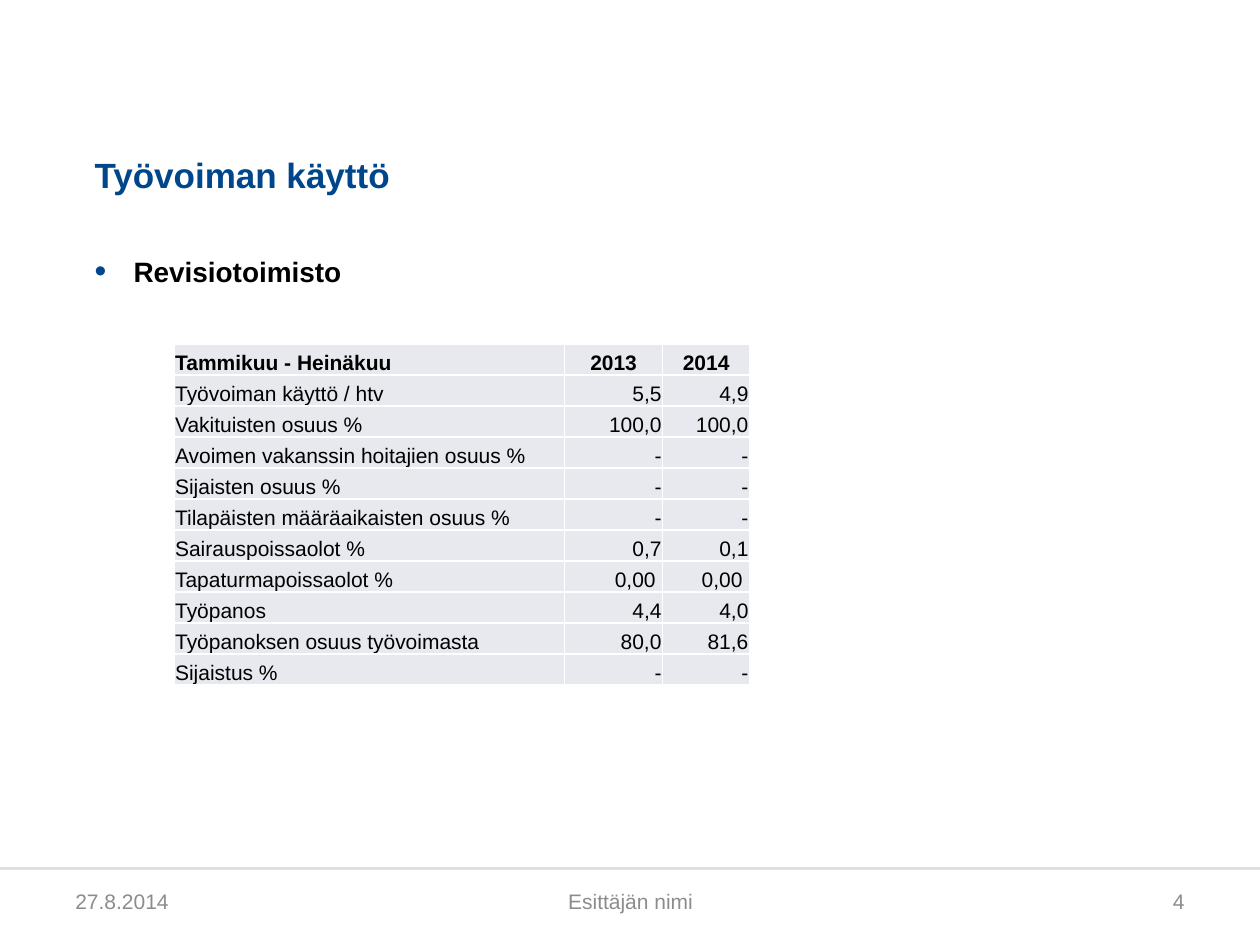
from lxml.etree import SubElement
from pptx import Presentation
from pptx.dml.color import RGBColor
from pptx.enum.shapes import MSO_CONNECTOR, MSO_SHAPE
from pptx.enum.text import MSO_ANCHOR, MSO_AUTO_SIZE, PP_ALIGN
from pptx.oxml.ns import qn
from pptx.util import Inches, Pt

COLORS = {"title": "00468B", "text": "000000", "footer": "8C8C8C",
          "rule": "DFDFDF", "cell": "E7E9EE", "white": "FFFFFF"}


def color(name):
    return RGBColor.from_string(COLORS[name])


def write(frame, text, size=12, ink="text", bold=False, align=PP_ALIGN.LEFT, bullet=None):
    """Put one formatted paragraph into a text frame, with an optional bullet."""
    paragraph = frame.paragraphs[0]
    paragraph.text = text
    paragraph.alignment = align
    paragraph.space_before = Pt(0)
    if bullet:
        properties = paragraph._p.get_or_add_pPr()
        properties.set("marL", str(Inches(0.31)))
        properties.set("indent", str(-Inches(0.31)))
        bullet_color = SubElement(properties, qn("a:buClr"))
        SubElement(bullet_color, qn("a:srgbClr"), val=COLORS["title"])
        SubElement(properties, qn("a:buSzPct"), val="120000")
        SubElement(properties, qn("a:buFont"), typeface="Arial")
        SubElement(properties, qn("a:buChar"), char=bullet)
    font = paragraph.runs[0].font
    font.name, font.size, font.bold = "Arial", Pt(size), bold
    font.color.rgb = color(ink)


deck = Presentation()
deck.slide_width, deck.slide_height = Inches(10), Inches(7.5)
slide = deck.slides.add_slide(deck.slide_layouts[1])
width, height = deck.slide_width, deck.slide_height

# Title and bullet list share the same margins
title, body = slide.shapes.title, slide.placeholders[1]
for holder, top, tall, anchor in ((title, 0.68, 0.87, MSO_ANCHOR.BOTTOM),
                                  (body, 2.02, 4.88, MSO_ANCHOR.TOP)):
    holder.left, holder.top = Inches(0.75), Inches(top)
    holder.width, holder.height = Inches(8.5), Inches(tall)
    frame = holder.text_frame
    frame.margin_left = frame.margin_right = frame.margin_top = frame.margin_bottom = 0
    frame.vertical_anchor = anchor
    frame.word_wrap = True
    frame.auto_size = MSO_AUTO_SIZE.NONE
write(title.text_frame, "Työvoiman käyttö", size=20, ink="title", bold=True)
write(body.text_frame, "Revisiotoimisto", size=16, bold=True, bullet="•")

# Footer band, its rule and three texts
band = slide.shapes.add_shape(MSO_SHAPE.RECTANGLE, 0, int(height * 0.92), width, int(height * 0.08))
band.shadow.inherit = False
band.fill.solid()
band.fill.fore_color.rgb = color("white")
band.line.fill.background()
rule_top = Inches(6.89)
rule = slide.shapes.add_connector(MSO_CONNECTOR.STRAIGHT, 0, rule_top, width, rule_top)
rule.line.color.rgb = color("rule")
rule.line.width = Pt(1.75)
SubElement(rule._element.spPr, qn("a:effectLst"))
for text, left, wide, align in (("27.8.2014", 0.5, 2.33, PP_ALIGN.LEFT),
                                ("Esittäjän nimi", 3.42, 3.17, PP_ALIGN.CENTER),
                                ("4", 7.17, 2.33, PP_ALIGN.RIGHT)):
    footer = slide.shapes.add_textbox(Inches(left), Inches(6.95), Inches(wide), Inches(0.4))
    footer.text_frame.word_wrap = True
    footer.text_frame.vertical_anchor = MSO_ANCHOR.MIDDLE
    write(footer.text_frame, text, ink="footer", align=align)

# Workforce table
records = [
    ("Tammikuu - Heinäkuu", "2013", "2014"),
    ("Työvoiman käyttö / htv", "5,5", "4,9"),
    ("Vakituisten osuus %", "100,0", "100,0"),
    ("Avoimen vakanssin hoitajien osuus %", "-", "-"),
    ("Sijaisten osuus %", "-", "-"),
    ("Tilapäisten määräaikaisten osuus %", "-", "-"),
    ("Sairauspoissaolot %", "0,7", "0,1"),
    ("Tapaturmapoissaolot %", "0,00 ", "0,00 "),
    ("Työpanos", "4,4", "4,0"),
    ("Työpanoksen osuus työvoimasta", "80,0", "81,6"),
    ("Sijaistus %", "-", "-"),
]
column_widths = (3.1, 0.78, 0.69)
table = slide.shapes.add_table(len(records), len(column_widths), Inches(1.38), Inches(2.73),
                               Inches(sum(column_widths)), Inches(2.71)).table
table.first_row = table.horz_banding = False
for column, wide in zip(table.columns, column_widths):
    column.width = Inches(wide)
for row, record in enumerate(records):
    for col, text in enumerate(record):
        cell = table.cell(row, col)
        cell.margin_left = cell.margin_right = cell.margin_top = Inches(0.01)
        cell.margin_bottom = 0
        cell.vertical_anchor = MSO_ANCHOR.BOTTOM
        if col == 0:
            align = PP_ALIGN.LEFT
        else:
            align = PP_ALIGN.CENTER if row == 0 else PP_ALIGN.RIGHT
        write(cell.text_frame, text, bold=row == 0, align=align)
        cell_properties = cell._tc.get_or_add_tcPr()
        for side in ("a:lnL", "a:lnR", "a:lnT", "a:lnB"):
            border = SubElement(cell_properties, qn(side), w=str(Pt(1)))
            border_fill = SubElement(border, qn("a:solidFill"))
            SubElement(border_fill, qn("a:srgbClr"), val=COLORS["white"])
        cell.fill.solid()
        cell.fill.fore_color.rgb = color("cell")

deck.save("out.pptx")
